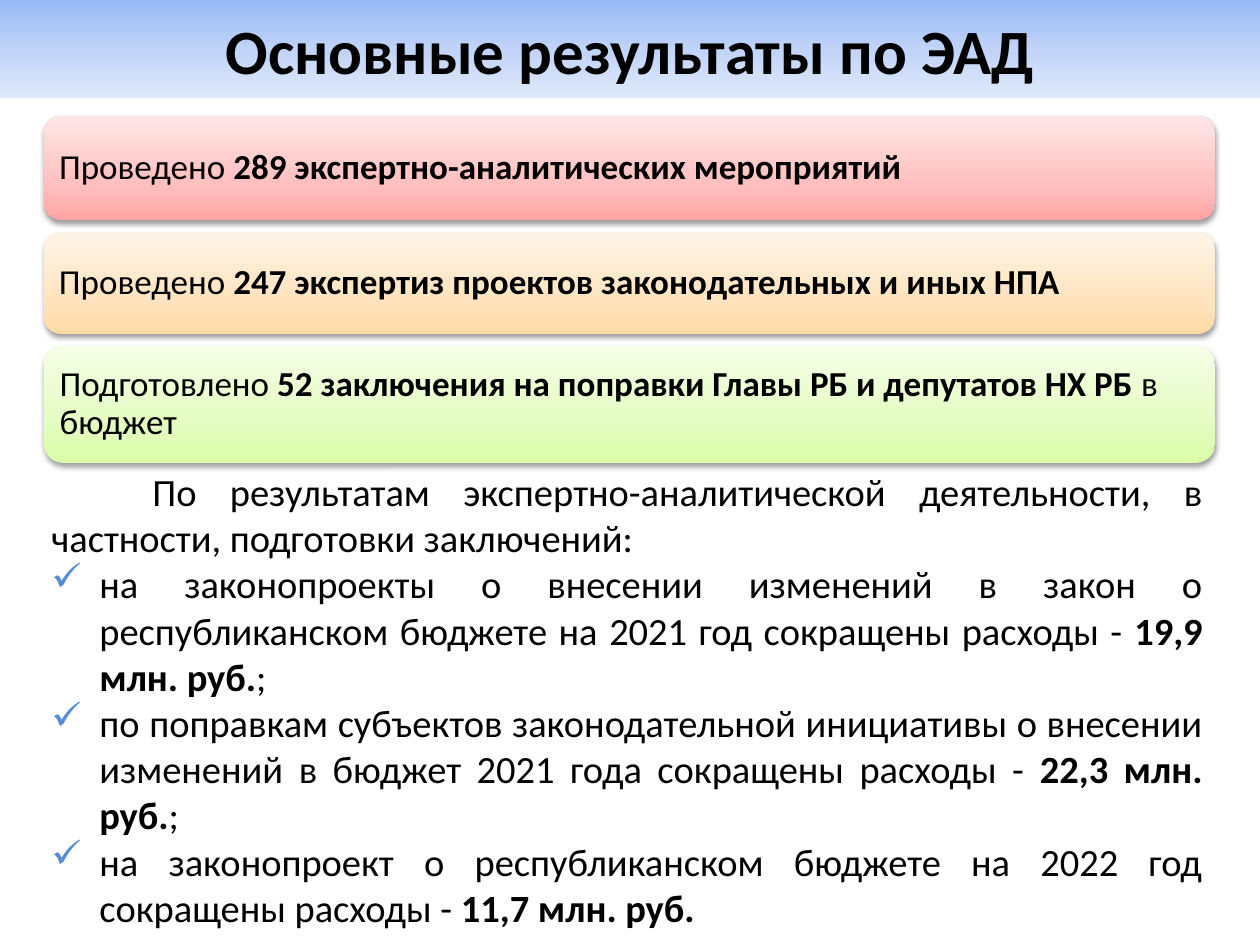
import pptx
import pptx.util
import pptx.dml.color
import pptx.enum.shapes
import pptx.enum.text
import pptx.oxml
import pptx.oxml.ns

PX_PER_INCH = 126
FONT = "Calibri"
COLORS = {
    "text": "000000", "check": "558ED5",
    "title": ("98B9F6", "C0D3F8", "E0E9FB"),
    "red": ("FFA6A5", "FFC0BF", "FFE7E7"),
    "orange": ("FFDAA5", "FEE4C0", "FFF4E7"),
    "green": ("DAFDA7", "E4FCC2", "F5FFE7"),
}
SHAPES = pptx.enum.shapes.MSO_SHAPE
ALIGN = pptx.enum.text.PP_ALIGN
MIDDLE = pptx.enum.text.MSO_ANCHOR.MIDDLE


def px(n):
    return pptx.util.Emu(round(n * 914400 / PX_PER_INCH))


def xml(text):
    root = text.replace(" ", f" {pptx.oxml.ns.nsdecls('a')} ", 1)
    return pptx.oxml.parse_xml(root)


def write(p, text, size=20, align=ALIGN.LEFT, spacing=None, bold=False):
    """Fill a paragraph; parts between asterisks switch bold on and off."""
    p.alignment = align
    p.line_spacing = spacing
    for i, part in enumerate(text.split("*")):
        if part:
            r = p.add_run()
            r.text = part
            r.font.name = FONT
            r.font.size = pptx.util.Pt(size)
            r.font.bold = bold or i % 2 == 1
            r.font.color.rgb = pptx.dml.color.RGBColor.from_string(COLORS["text"])


class Deck:
    def __init__(self, width, height):
        self.prs = pptx.Presentation()
        self.prs.slide_width, self.prs.slide_height = px(width), px(height)
        self.s = self.prs.slides.add_slide(self.prs.slide_layouts[6])

    def panel(self, kind, box, color, stops, angle, inset=10):
        sp = self.s.shapes.add_shape(kind, *map(px, box))
        sp.shadow.inherit = False
        sp.line.fill.background()
        sp.fill.gradient()
        sp.fill.gradient_angle = angle
        gs = sp.fill._fill._gradFill.find(pptx.oxml.ns.qn("a:gsLst"))
        for old in list(gs):
            gs.remove(old)
        for pos, rgb in zip(stops, COLORS[color]):
            gs.append(xml(f'<a:gs pos="{pos * 1000}"><a:srgbClr val="{rgb}"/></a:gs>'))
        tf = sp.text_frame
        tf.word_wrap = True
        tf.vertical_anchor = MIDDLE
        tf.margin_left = tf.margin_right = tf.margin_top = tf.margin_bottom = px(inset)
        return sp

    def title(self, text, height):
        sp = self.panel(SHAPES.RECTANGLE, (0, 0, 1260, height), "title", (0, 50, 100), 270)
        write(sp.text_frame.paragraphs[0], text, size=36, align=ALIGN.CENTER, bold=True)

    def card(self, text, box, color):
        sp = self.panel(SHAPES.ROUNDED_RECTANGLE, box, color, (0, 35, 100), 90)
        effects = sp._element.spPr.find(pptx.oxml.ns.qn("a:effectLst"))
        effects.append(xml(
            '<a:outerShdw blurRad="40000" dist="20000" dir="5400000" rotWithShape="0">'
            '<a:srgbClr val="000000"><a:alpha val="38000"/></a:srgbClr></a:outerShdw>'))
        write(sp.text_frame.paragraphs[0], text, spacing=0.9)

    def body(self, intro, items, box):
        tf = self.s.shapes.add_textbox(*map(px, box)).text_frame
        tf.word_wrap = True
        p = tf.paragraphs[0]
        write(p, intro, size=22, align=ALIGN.JUSTIFY)
        p._p.get_or_add_pPr().set("indent", str(px(101)))
        for item in items:
            p = tf.add_paragraph()
            write(p, item, size=22, align=ALIGN.JUSTIFY)
            self.check(p, 48)

    def check(self, p, hang):
        pPr = p._p.get_or_add_pPr()
        pPr.set("marL", str(px(hang)))
        pPr.set("indent", str(-px(hang)))
        pPr.append(xml(f'<a:buClr ><a:srgbClr val="{COLORS["check"]}"/></a:buClr>'))
        pPr.append(xml('<a:buChar char="✓"/>'))


def main():
    deck = Deck(1260, 945)

    # Title band
    deck.title("Основные результаты по ЭАД", 98)

    # Result cards
    cards = [
        ("Проведено *289 экспертно-аналитических мероприятий*", 104, "red"),
        ("Проведено *247 экспертиз проектов законодательных и иных НПА*", 102, "orange"),
        ("Подготовлено *52 заключения на поправки Главы РБ и депутатов НХ РБ *в бюджет",
         117, "green"),
    ]
    top, gap = 116, 12
    for text, height, color in cards:
        deck.card(text, (44, top, 1171, height), color)
        top += height + gap

    # Savings by type of conclusion
    deck.body(
        "По результатам экспертно-аналитической деятельности, в частности, "
        "подготовки заключений:",
        [
            "на законопроекты о внесении изменений в закон о республиканском бюджете "
            "на 2021 год сокращены расходы - *19,9 млн. руб.*;",
            "по поправкам субъектов законодательной инициативы о внесении изменений "
            "в бюджет 2021 года сокращены расходы - *22,3 млн. руб.*;",
            "на законопроект о республиканском бюджете на 2022 год "
            "сокращены расходы - *11,7 млн. руб.*",
        ],
        (39, 462, 1176, 479))

    deck.prs.save("out.pptx")


if __name__ == "__main__":
    main()
